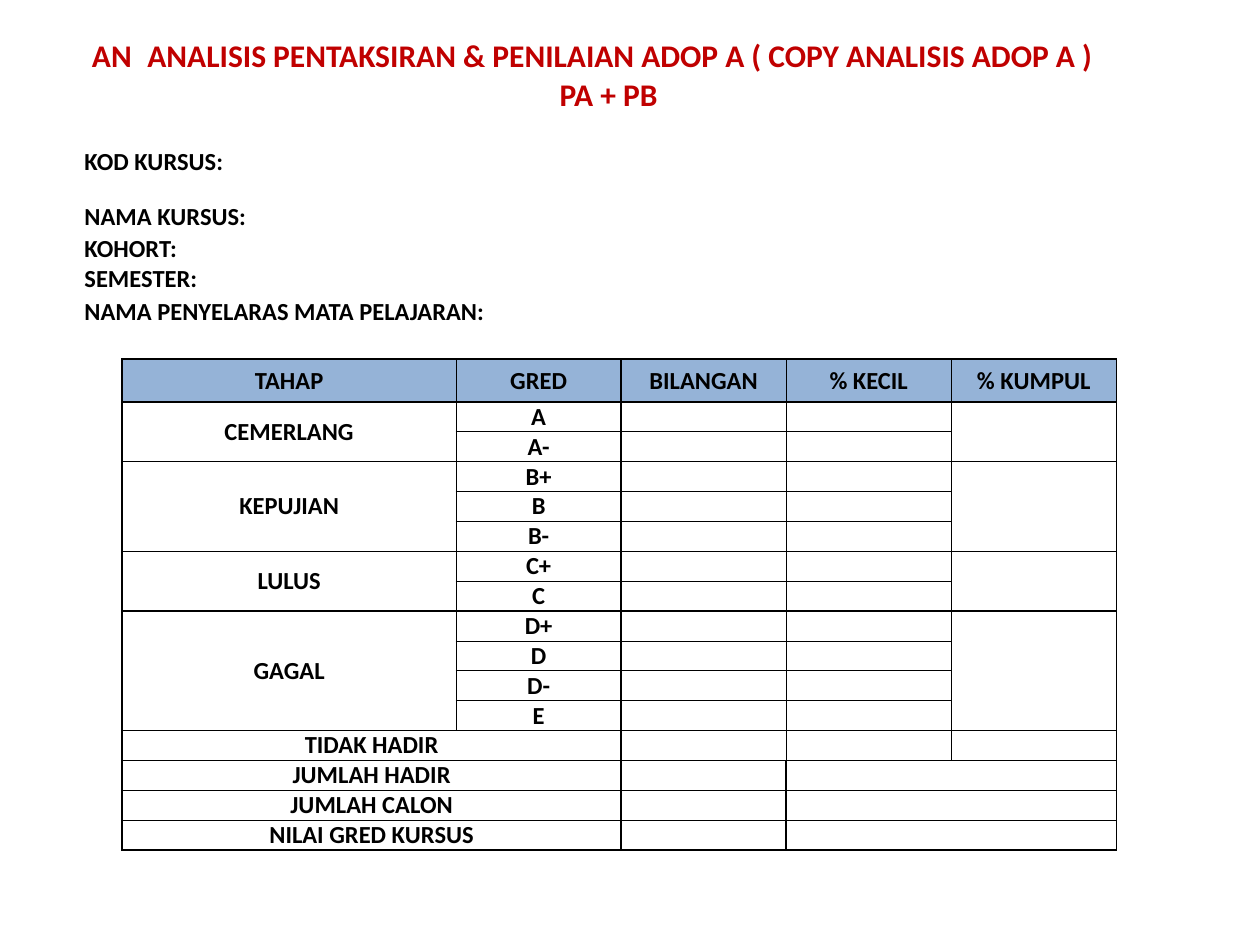
"""Build the course grade analysis form slide."""
from dataclasses import dataclass
from typing import Sequence

from lxml.etree import SubElement
from pptx import Presentation
from pptx.dml.color import RGBColor
from pptx.enum.text import MSO_ANCHOR, PP_ALIGN
from pptx.oxml.ns import qn
from pptx.slide import Slide
from pptx.table import Table, _Cell
from pptx.util import Inches, Pt


@dataclass(frozen=True)
class Theme:
    font: str = "Calibri"
    title_size: int = 18
    body_size: int = 14
    title_color: str = "C00000"
    text_color: str = "000000"
    border_color: str = "000000"
    header_fill: str = "95B3D7"
    thick: float = 1
    thin: float = 0.5
    plain_table_style: str = "{2D5ABB26-0587-4C30-8999-92F81FD0307C}"


@dataclass(frozen=True)
class Block:
    row: int
    column: int
    text: str = ""
    rows: int = 1
    columns: int = 1
    merged: bool = True


@dataclass(frozen=True)
class Level:
    name: str
    grades: tuple[str, ...]


THEME = Theme()
TITLE_LINES = (
    "AN\tANALISIS PENTAKSIRAN & PENILAIAN ADOP A ( COPY ANALISIS ADOP A )",
    "PA + PB",
)
COURSE_FIELDS = (
    Block(0, 0, "KOD KURSUS:", columns=3),
    Block(0, 3, columns=3),
    Block(1, 0, "NAMA KURSUS:", columns=2),
    Block(1, 3, columns=3),
    Block(2, 0, "KOHORT:", columns=2),
    Block(3, 0, "SEMESTER:", columns=2),
    Block(4, 0, "NAMA PENYELARAS MATA PELAJARAN:", columns=3),
    Block(4, 3, columns=3),
)
HEADERS = ("TAHAP", "GRED", "BILANGAN", "% KECIL", "% KUMPUL")
LEVELS = (
    Level("CEMERLANG", ("A", "A-")),
    Level("KEPUJIAN", ("B+", "B", "B-")),
    Level("LULUS", ("C+", "C")),
    Level("GAGAL", ("D+", "D", "D-", "E")),
)
ABSENT = "TIDAK HADIR"
TOTALS = ("JUMLAH HADIR", "JUMLAH CALON", "NILAI GRED KURSUS")
HEADER_ROW = 6
COLUMN_WIDTHS = (0.3, 2.65) + (1.31,) * 4
ROW_HEIGHTS = (0.59, 0.28, 0.23, 0.23, 0.28, 0.23, 0.34) + (0.23,) * 15
THICK_COLUMN_EDGES = {1, 3, 6}


def add_plain_table(slide: Slide, left: float, top: float,
                    widths: Sequence[float], heights: Sequence[float]) -> Table:
    """Add a table without style, sized by its columns and rows."""
    frame = slide.shapes.add_table(
        len(heights), len(widths), Inches(left), Inches(top),
        Inches(sum(widths)), Inches(sum(heights)))
    table = frame.table
    table.first_row = table.horz_banding = False
    table._tbl.tblPr.find(qn("a:tableStyleId")).text = THEME.plain_table_style
    for column, width in zip(table.columns, widths):
        column.width = Inches(width)
    for row, height in zip(table.rows, heights):
        row.height = Inches(height)
    for cell in table.iter_cells():
        cell.margin_left = cell.margin_right = 0
        cell.margin_top = cell.margin_bottom = 0
        cell.vertical_anchor = MSO_ANCHOR.MIDDLE
        end_properties = cell.text_frame.paragraphs[0]._p.get_or_add_endParaRPr()
        end_properties.set("sz", str(THEME.body_size * 100))
    return table


def write_cell(cell: _Cell, text: str, size: int, color: str, alignment: PP_ALIGN) -> None:
    """Put bold text in a cell."""
    cell.text_frame.text = text
    for paragraph in cell.text_frame.paragraphs:
        paragraph.alignment = alignment
        for run in paragraph.runs:
            run.font.name = THEME.font
            run.font.size = Pt(size)
            run.font.bold = True
            run.font.color.rgb = RGBColor.from_string(color)


def add_border(cell: _Cell, side: str, width: float) -> None:
    """Draw one side of a cell."""
    line = SubElement(cell._tc.get_or_add_tcPr(), qn(f"a:ln{side}"), w=str(Pt(width)))
    fill = SubElement(line, qn("a:solidFill"))
    SubElement(fill, qn("a:srgbClr"), val=THEME.border_color)


def fill_block(table: Table, block: Block, alignment: PP_ALIGN) -> None:
    """Merge the cells of a block and write its text."""
    origin = table.cell(block.row, block.column)
    if block.merged and block.rows * block.columns > 1:
        origin.merge(table.cell(block.row + block.rows - 1,
                                block.column + block.columns - 1))
    if block.text:
        write_cell(origin, block.text, THEME.body_size, THEME.text_color, alignment)


def outline_block(table: Table, block: Block, thick_row_edges: set[int]) -> None:
    """Draw the outer borders of a block."""
    bottom, right = block.row + block.rows, block.column + block.columns
    for row in range(block.row, bottom):
        for column in range(block.column, right):
            is_origin = block.merged and (row, column) == (block.row, block.column)
            sides = (
                ("L", block.column, column == block.column, THICK_COLUMN_EDGES),
                ("R", right, column + 1 == right, THICK_COLUMN_EDGES),
                ("T", block.row, row == block.row, thick_row_edges),
                ("B", bottom, row + 1 == bottom, thick_row_edges),
            )
            for side, edge, on_edge, thick_edges in sides:
                if is_origin or on_edge:
                    width = THEME.thick if edge in thick_edges else THEME.thin
                    add_border(table.cell(row, column), side, width)


def grade_blocks() -> tuple[list[Block], set[int]]:
    """Lay out the grade grid and its thick horizontal edges."""
    blocks = [Block(HEADER_ROW, column, text) for column, text in enumerate(HEADERS, 1)]
    row = HEADER_ROW + 1
    thick_edges = {HEADER_ROW, row}
    for level in LEVELS:
        count = len(level.grades)
        blocks += [Block(row, 1, level.name, rows=count), Block(row, 5, rows=count)]
        for grade_row, grade in enumerate(level.grades, row):
            blocks += [Block(grade_row, 2, grade), Block(grade_row, 3), Block(grade_row, 4)]
        row += count
        thick_edges.add(row)
    blocks.append(Block(row, 1, ABSENT, columns=2))
    blocks += [Block(row, column) for column in (3, 4, 5)]
    for total_row, total in enumerate(TOTALS, row + 1):
        blocks += [Block(total_row, 1, total, columns=2),
                   Block(total_row, 3, columns=3, merged=False)]
    return blocks, thick_edges | {row + 1, row + 1 + len(TOTALS)}


def add_title(slide: Slide) -> None:
    """Add the two-line title."""
    cell = add_plain_table(slide, 0.17, 0.21, (9.32,), (0.79,)).cell(0, 0)
    write_cell(cell, "\n".join(TITLE_LINES), THEME.title_size, THEME.title_color,
               PP_ALIGN.CENTER)
    first_line = cell.text_frame.paragraphs[0]
    first_line.alignment = PP_ALIGN.LEFT
    properties = first_line._p.get_or_add_pPr()
    properties.set("marL", "0")
    properties.set("indent", str(Inches(0.56)))
    tabs = SubElement(properties, qn("a:tabLst"))
    SubElement(tabs, qn("a:tab"), pos=str(Inches(1.55)), algn="l")


def add_grade_form(slide: Slide) -> None:
    """Add the course fields and the grade grid."""
    table = add_plain_table(slide, 0.67, 0.99, COLUMN_WIDTHS, ROW_HEIGHTS)
    for block in COURSE_FIELDS:
        fill_block(table, block, PP_ALIGN.LEFT)
    blocks, thick_edges = grade_blocks()
    for block in blocks:
        fill_block(table, block, PP_ALIGN.CENTER)
        outline_block(table, block, thick_edges)
        if block.row == HEADER_ROW:
            fill = table.cell(block.row, block.column).fill
            fill.solid()
            fill.fore_color.rgb = RGBColor.from_string(THEME.header_fill)


def main() -> None:
    """Create and save the presentation."""
    presentation = Presentation()
    presentation.slide_width = Inches(10)
    presentation.slide_height = Inches(7.5)
    slide = presentation.slides.add_slide(presentation.slide_layouts[6])
    add_title(slide)
    add_grade_form(slide)
    presentation.save("out.pptx")


if __name__ == "__main__":
    main()
